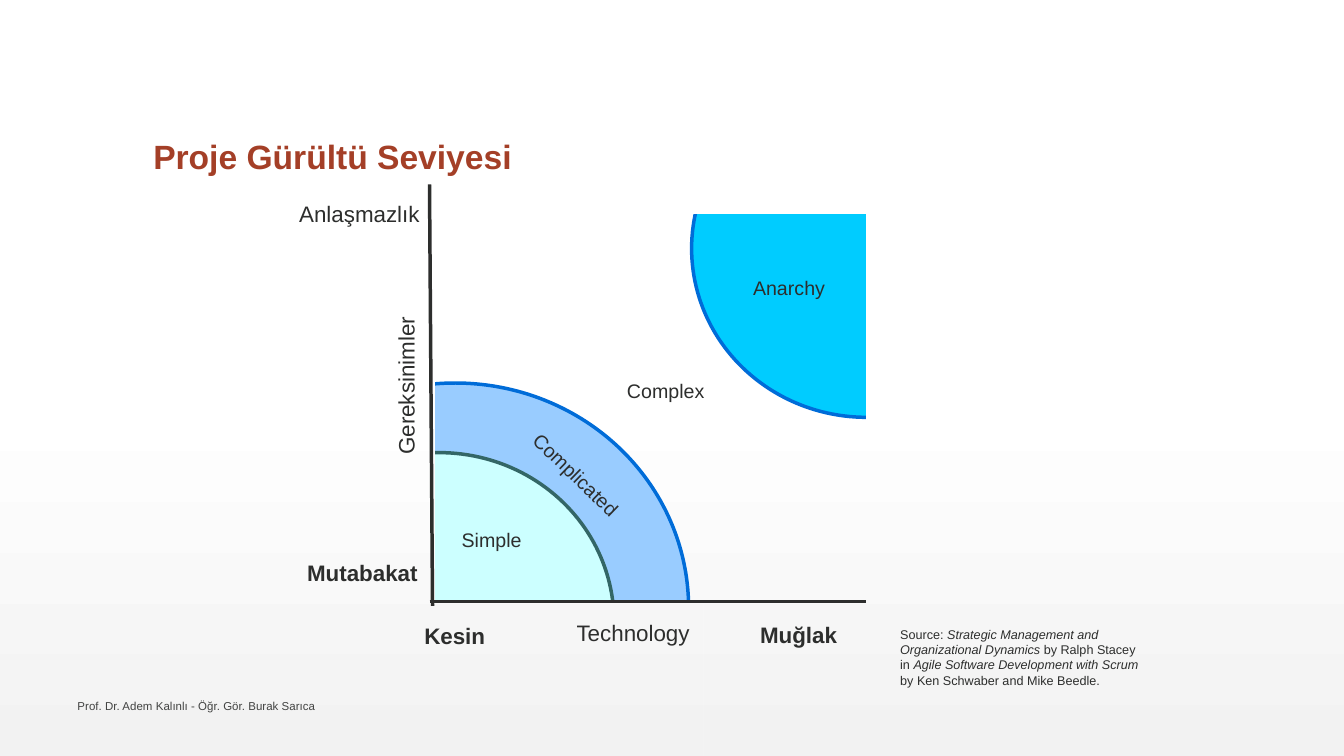
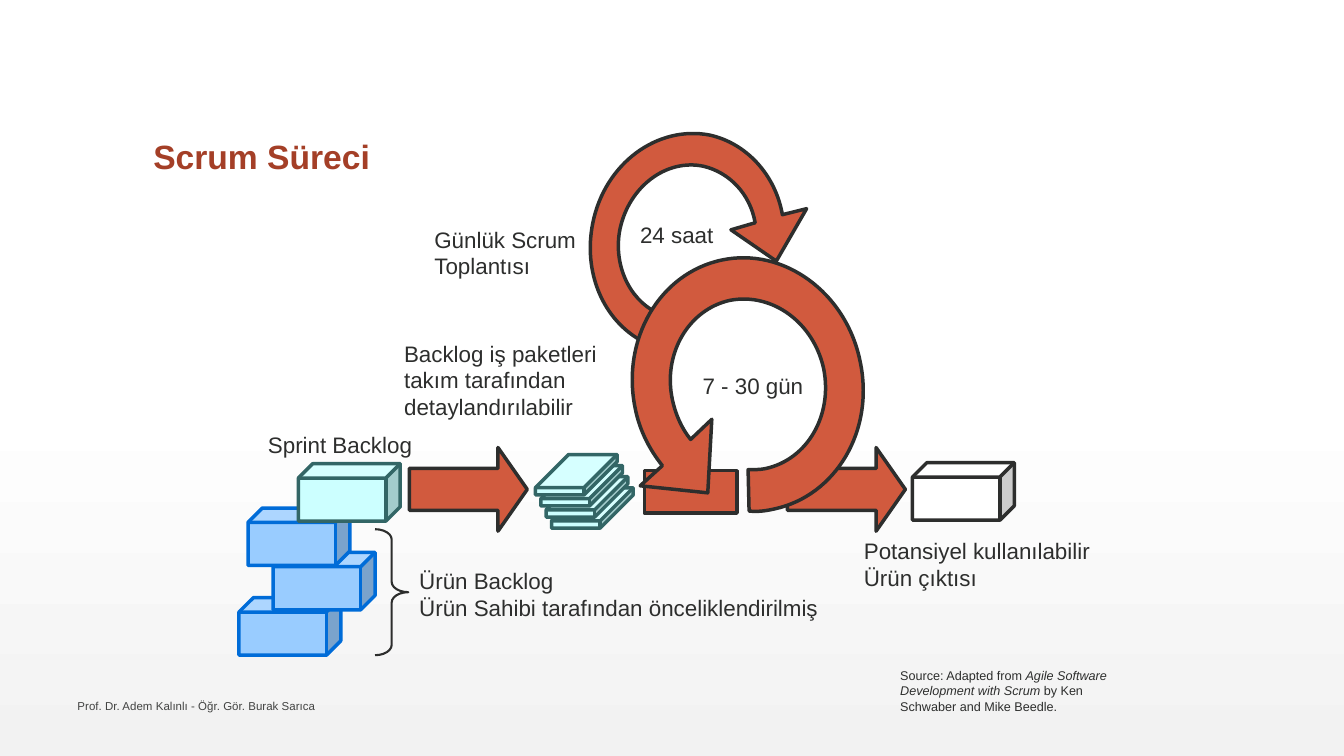
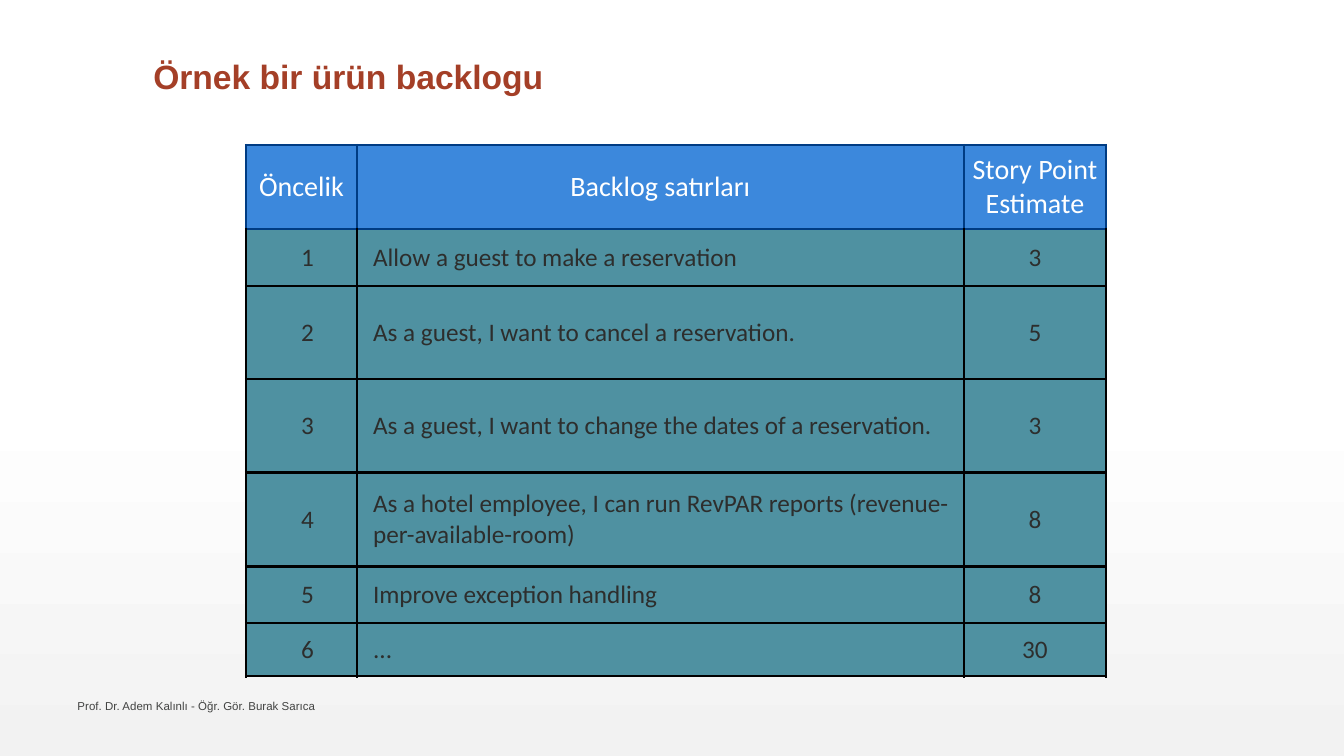
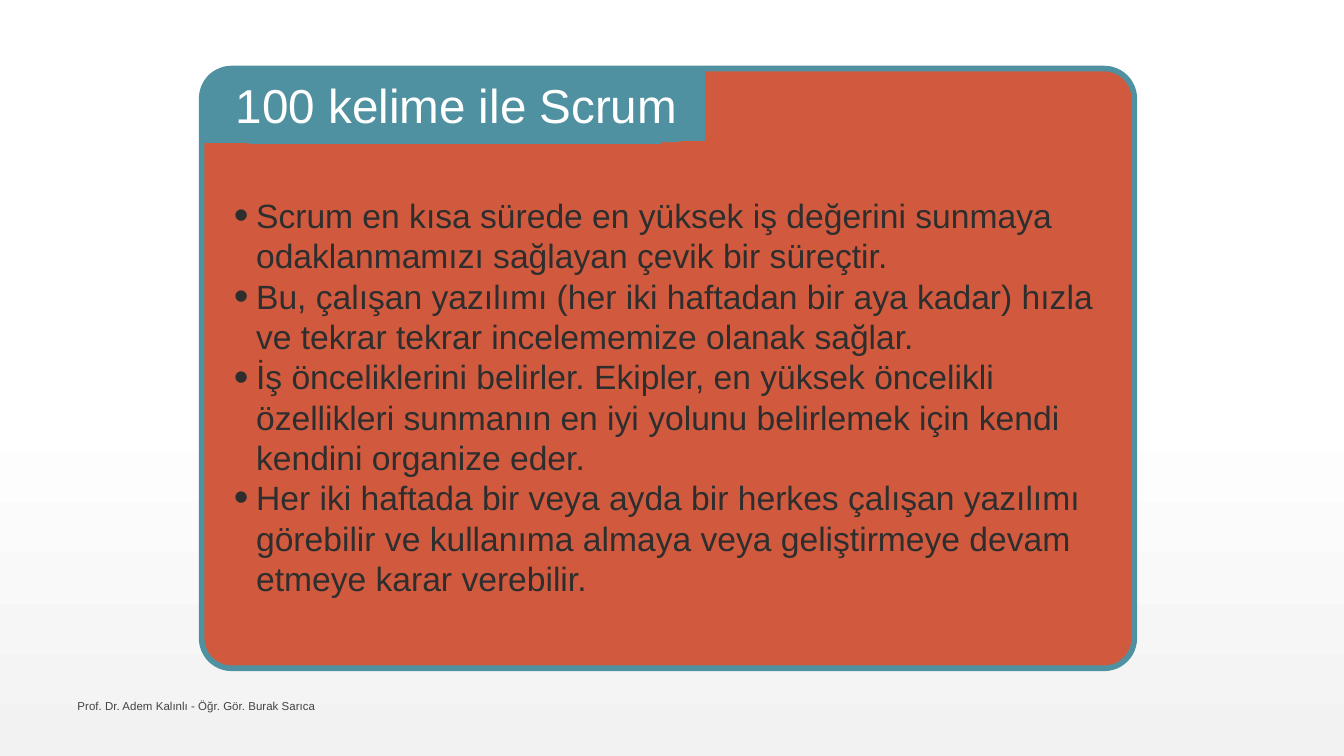
from lxml import etree
from pptx import Presentation
from pptx.dml.color import RGBColor
from pptx.enum.shapes import MSO_CONNECTOR, MSO_SHAPE as SHAPE
from pptx.enum.text import MSO_ANCHOR as ANCHOR, MSO_AUTO_SIZE as AUTO_SIZE, PP_ALIGN as ALIGN
from pptx.oxml.ns import qn
from pptx.util import Inches, Pt

COLORS = {
    "white": "FFFFFF", "page_end": "F2F2F2", "ink": "2D2E2D", "footer": "424342",
    "title": "A43F27", "orange": "D15A3E", "teal": "4F91A1",
    "blue": "99CCFF", "blue_line": "006CD8", "mint": "CCFFFF", "mint_line": "336666",
    "cyan": "00CCFF", "header": "3C88DC", "header_line": "003C83", "black": "000000",
}
FONT = "Arial"
FOOTER = "Prof. Dr. Adem Kalınlı - Öğr. Gör. Burak Sarıca"
TITLE_BOX = (1.42, 0.55, 10.5, 1.25)

AGREED_ZONES = [
    ((2.2, 3.8, 4.63, 4.46), "blue", "blue_line"),
    ((2.62, 4.49, 3.47, 3.35), "mint", "mint_line"),
]
AGREED_MASKS = [(2.06, 5.97, 4.92, 2.34), (2.06, 3.38, 2.26, 2.89)]
ANARCHY_ZONES = [((6.86, 0.79, 3.47, 3.35), "cyan", "blue_line")]
ANARCHY_MASKS = [(6.28, 0.66, 4.92, 1.46), (8.59, 2.01, 2.6, 2.47)]
AXES = [((4.29, 6.01), (4.26, 1.83)), ((4.26, 5.97), (8.59, 5.97))]
ZONE_LABELS = [
    ("Simple", (4.48, 5.19, 1.59, 0.34), 0),
    ("Complicated", (4.95, 4.84, 2.14, 0.34), 44.1),
    ("Anarchy", (7.37, 2.69, 1.59, 0.34), 0),
    ("Complex", (6.12, 3.71, 1.88, 0.34), 0),
]
AXIS_LABELS = [
    ("Kesin", (4.11, 6.12, 1.74, 0.37), True, ALIGN.LEFT, 0),
    ("Muğlak", (7.44, 6.11, 1.74, 0.37), True, ALIGN.LEFT, 0),
    ("Technology", (5.62, 6.09, 2.99, 0.37), False, ALIGN.LEFT, 0),
    ("Mutabakat", (2.52, 5.5, 1.72, 0.37), True, ALIGN.RIGHT, 0),
    ("Anlaşmazlık", (2.52, 1.94, 1.74, 0.37), False, ALIGN.RIGHT, 0),
    ("Gereksinimler", (2.52, 2.92, 3.01, 0.37), False, ALIGN.LEFT, 270),
]
NOISE_SOURCE = [
    ("Source: ", False),
    ("Strategic Management and Organizational Dynamics ", True),
    ("by Ralph Stacey in ", False),
    ("Agile Software Development with Scrum ", True),
    ("by Ken Schwaber and Mike Beedle.", False),
]

DAILY_LOOP = [
    (7.49, 2.21), (7.44, 1.92, 7.23, 1.71, 6.98, 1.65), (6.61, 1.57, 6.24, 1.85, 6.15, 2.27),
    (6.08, 2.61, 6.23, 2.96, 6.51, 3.1), (6.38, 3.39), (5.98, 3.18, 5.78, 2.7, 5.88, 2.21),
    (6, 1.62, 6.52, 1.24, 7.04, 1.34), (7.4, 1.42, 7.69, 1.73, 7.76, 2.13),
    (8, 2.07), (7.7, 2.59), (7.25, 2.28),
]
SPRINT_LOOP = [
    (6.85, 4.36), (6.76, 4.25, 6.7, 4.11, 6.67, 3.97), (6.57, 3.51, 6.83, 3.07, 7.24, 2.98),
    (7.66, 2.9, 8.07, 3.2, 8.17, 3.66), (8.26, 4.12, 8.01, 4.56, 7.59, 4.65),
    (7.54, 4.66, 7.48, 4.66, 7.42, 4.66), (7.43, 5.07), (7.51, 5.08, 7.59, 5.07, 7.68, 5.05),
    (8.29, 4.92, 8.68, 4.27, 8.53, 3.58), (8.39, 2.9, 7.77, 2.45, 7.16, 2.58),
    (6.54, 2.71, 6.16, 3.37, 6.3, 4.05), (6.34, 4.26, 6.44, 4.46, 6.57, 4.62),
    (6.35, 4.82), (7.02, 4.89), (7.06, 4.16),
]
PRODUCT_CUBES = [(2.37, 5.93), (2.71, 5.48), (2.46, 5.04)]
PROCESS_LABELS = [
    (["7 - 30 gün"], (6.87, 3.64, 1.21, 0.37)),
    (["24 saat"], (6.25, 2.14, 0.94, 0.37)),
    (["Ürün Backlog", "Ürün Sahibi tarafından önceliklendirilmiş"], (4.06, 5.58, 4.2, 0.64)),
    (["Sprint Backlog"], (2.56, 4.23, 1.63, 0.37)),
    (["Backlog iş paketleri\ntakım tarafından \ndetaylandırılabilir"], (3.91, 3.32, 2.13, 0.91)),
    (["Potansiyel kullanılabilir\nÜrün çıktısı"], (8.47, 5.28, 2.47, 0.64)),
    (["Günlük Scrum \nToplantısı"], (4.21, 2.19, 1.69, 0.64)),
]
PROCESS_SOURCE = [
    ("Source: Adapted from ", False),
    ("Agile Software Development with Scrum ", True),
    ("by Ken Schwaber and Mike Beedle.", False),
]

BACKLOG_ROWS = [
    ("Öncelik", "Backlog satırları", "Story Point Estimate"),
    ("1", "Allow a guest to make a reservation", "3"),
    ("2", "As a guest, I want to cancel a reservation.", "5"),
    ("3", "As a guest, I want to change the dates of a reservation.", "3"),
    ("4", "As a hotel employee, I can run RevPAR reports (revenue-per-available-room)", "8"),
    ("5", "Improve exception handling", "8"),
    ("6", "...", "30"),
]
TABLE_BOX = (2.44, 1.44, 8.52, 5.51)
COLUMN_WIDTHS = [1.1, 6.02, 1.41]
ROW_HEIGHTS = [0.83, 0.57, 0.92, 0.93, 0.93, 0.56, 0.53]

SCRUM_POINTS = [
    "Scrum en kısa sürede en yüksek iş değerini sunmaya odaklanmamızı sağlayan çevik bir süreçtir.",
    "Bu, çalışan yazılımı (her iki haftadan bir aya kadar) hızla ve tekrar tekrar incelememize "
    "olanak sağlar.",
    "İş önceliklerini belirler. Ekipler, en yüksek öncelikli özellikleri sunmanın en iyi yolunu "
    "belirlemek için kendi kendini organize eder.",
    "Her iki haftada bir veya ayda bir herkes çalışan yazılımı görebilir ve kullanıma almaya veya "
    "geliştirmeye devam etmeye karar verebilir.",
]
TAB_CORNERS = [
    [(6.68, 1.41), (6.89, 1.4, 6.99, 1.28, 6.99, 1.12), (6.99, 0.96), (6.5, 0.96), (6.5, 1.41)],
    [(2.3, 0.66), (2.09, 0.67, 1.99, 0.79, 1.99, 0.96), (1.99, 1.11), (2.48, 1.11), (2.48, 0.66)],
]
TAB_BLOCKS = [
    ((2.47, 0.69, 4.08, 0.72), "teal"),
    ((1.99, 1.1, 0.57, 0.31), "teal"),
    ((6.42, 0.68, 0.57, 0.33), None),
]


def color(name):
    return RGBColor.from_string(COLORS[name])


def inches(values):
    return [Inches(value) for value in values]


def paint(shape, fill=None, line=None, width=2.5):
    if fill:
        shape.fill.solid()
        shape.fill.fore_color.rgb = color(fill)
    else:
        shape.fill.background()
    if line:
        shape.line.color.rgb = color(line)
        shape.line.width = Pt(width)
    else:
        shape.line.fill.background()


def add_run(paragraph, text, size, ink="ink", bold=False, italic=False, font=FONT):
    for index, line in enumerate(text.split("\n")):
        if index:
            paragraph.add_line_break()
        run = paragraph.add_run()
        run.text = line
        run.font.name = font
        run.font.size = Pt(size)
        run.font.bold = bold
        run.font.italic = italic
        run.font.color.rgb = color(ink)


def add_text(slide, box, paragraphs, size, ink="ink", bold=False, align=ALIGN.LEFT,
             rotation=0, wrap=True, anchor=ANCHOR.TOP, auto_size=AUTO_SIZE.SHAPE_TO_FIT_TEXT):
    shape = slide.shapes.add_textbox(*inches(box))
    shape.rotation = rotation
    frame = shape.text_frame
    frame.word_wrap = wrap
    frame.auto_size = auto_size
    frame.vertical_anchor = anchor
    for index, runs in enumerate(paragraphs):
        paragraph = frame.add_paragraph() if index else frame.paragraphs[0]
        paragraph.alignment = align
        for text, italic in ([(runs, False)] if isinstance(runs, str) else runs):
            add_run(paragraph, text, size, ink, bold, italic)
    return frame


def add_shape(slide, kind, box, fill=None, line=None, width=2.5, adjustments=()):
    shape = slide.shapes.add_shape(kind, *inches(box))
    shape.shadow.inherit = False
    for index, value in enumerate(adjustments):
        shape.adjustments[index] = value
    paint(shape, fill, line, width)
    return shape


def add_mask(slide, box):
    mask = add_shape(slide, SHAPE.RECTANGLE, box)
    element = mask._element
    element.set("useBgFill", "1")
    element.spPr.remove(element.spPr.find(qn("a:noFill")))
    element.remove(element.find(qn("p:style")))


def add_outline(slide, steps, fill, line=None):
    points = [step[start:start + 2] for step in steps for start in range(0, len(step), 2)]
    corners = [inches(point) for point in points]
    builder = slide.shapes.build_freeform(*corners[0])
    builder.add_line_segments(corners[1:], close=True)
    shape = builder.convert_to_shape()
    shape.shadow.inherit = False
    paint(shape, fill, line)
    segments = iter(list(shape._element.iter(qn("a:lnTo"))))
    for step in steps[1:]:
        segment = next(segments)
        if len(step) == 6:
            segment.tag = qn("a:cubicBezTo")
            for extra in (next(segments), next(segments)):
                segment.append(extra[0])
                extra.getparent().remove(extra)


def set_title(slide, text, box=TITLE_BOX, size=24, ink="title", bold=True,
              anchor=ANCHOR.BOTTOM, spacing=0.9):
    title = slide.shapes.title
    title.left, title.top, title.width, title.height = inches(box)
    frame = title.text_frame
    frame.word_wrap = True
    frame.vertical_anchor = anchor
    paragraph = frame.paragraphs[0]
    paragraph.alignment = ALIGN.LEFT
    paragraph.line_spacing = spacing
    add_run(paragraph, text, size, ink, bold)
    return title


def set_margins(frame, margin):
    frame.margin_left = frame.margin_right = Inches(margin)
    frame.margin_top = frame.margin_bottom = Inches(margin)


def set_background(presentation):
    fill = presentation.slide_master.background.fill
    fill.gradient()
    fill.gradient_angle = 270
    for stop, position, name in zip(fill.gradient_stops, (0.53, 1), ("white", "page_end")):
        stop.position = position
        stop.color.rgb = color(name)


def build_noise_slide(slide):
    set_title(slide, "Proje Gürültü Seviyesi")
    for zones, masks in ((AGREED_ZONES, AGREED_MASKS), (ANARCHY_ZONES, ANARCHY_MASKS)):
        for box, fill, line in zones:
            add_shape(slide, SHAPE.OVAL, box, fill, line)
        for box in masks:
            add_mask(slide, box)
    for start, end in AXES:
        axis = slide.shapes.add_connector(MSO_CONNECTOR.STRAIGHT, *inches(start + end))
        axis.line.color.rgb = color("ink")
        axis.line.width = Pt(2.5)
        etree.SubElement(axis._element.spPr, qn("a:effectLst"))
    for text, box, rotation in ZONE_LABELS:
        add_text(slide, box, [text], 14, rotation=rotation)
    for text, box, bold, align, rotation in AXIS_LABELS:
        add_text(slide, box, [text], 16, bold=bold, align=align, rotation=rotation)
    add_text(slide, (8.83, 6.17, 2.58, 0.71), [NOISE_SOURCE], 9)


def add_cube(slide, position, fill, line):
    add_shape(slide, SHAPE.CUBE, position + (1.01, 0.57), fill, line, adjustments=(0.25,))


def add_arrow(slide, left):
    add_shape(slide, SHAPE.RIGHT_ARROW, (left, 4.44, 1.17, 0.83), "orange", "ink",
              adjustments=(0.5, 0.35))


def build_process_slide(slide):
    set_title(slide, "Scrum Süreci")
    add_arrow(slide, 7.81)
    add_shape(slide, SHAPE.RECTANGLE, (6.39, 4.67, 0.92, 0.42), "orange", "ink")
    add_outline(slide, DAILY_LOOP, "orange", "ink")
    for position in PRODUCT_CUBES:
        add_cube(slide, position, "blue", "blue_line")
    add_cube(slide, (2.96, 4.6), "mint", "mint_line")
    for level in range(4):
        box = (5.47 - 0.053 * level, 4.84 - 0.11 * level, 0.81, 0.4)
        add_shape(slide, SHAPE.CUBE, box, "mint", "mint_line", adjustments=(0.82,))
    add_outline(slide, SPRINT_LOOP, "orange", "ink")
    add_arrow(slide, 4.06)
    add_cube(slide, (9.05, 4.59), "white", "ink")
    add_shape(slide, SHAPE.RIGHT_BRACE, (3.72, 5.25, 0.33, 1.25), line="ink", width=1.5,
              adjustments=(0.31, 0.5))
    for paragraphs, box in PROCESS_LABELS:
        add_text(slide, box, paragraphs, 16, wrap=False)
    add_text(slide, (8.83, 6.58, 2.58, 0.56), [PROCESS_SOURCE], 9)


def set_borders(cell, names):
    properties = cell._tc.get_or_add_tcPr()
    for index, (side, name) in enumerate(zip(("lnL", "lnR", "lnT", "lnB"), names)):
        line = etree.Element(qn(f"a:{side}"), w=str(Pt(2)))
        fill = etree.SubElement(line, qn("a:solidFill"))
        etree.SubElement(fill, qn("a:srgbClr"), val=COLORS[name])
        properties.insert(index, line)


def build_backlog_slide(slide):
    set_title(slide, "Örnek bir ürün backlogu", anchor=ANCHOR.TOP)
    table = slide.shapes.add_table(
        len(ROW_HEIGHTS), len(COLUMN_WIDTHS), *inches(TABLE_BOX)).table
    for column, width in zip(table.columns, COLUMN_WIDTHS):
        column.width = Inches(width)
    for row_index, texts in enumerate(BACKLOG_ROWS):
        table.rows[row_index].height = Inches(ROW_HEIGHTS[row_index])
        header = row_index == 0
        for column_index, text in enumerate(texts):
            cell = table.cell(row_index, column_index)
            indented = not header and column_index < 2
            set_margins(cell, 0.04)
            if indented:
                cell.margin_left = Inches(0.16)
            cell.vertical_anchor = ANCHOR.MIDDLE
            cell.fill.solid()
            cell.fill.fore_color.rgb = color("header" if header else "teal")
            edge = "header_line" if header else "black"
            set_borders(cell, (edge, edge, "header_line" if row_index < 2 else "black", edge))
            paragraph = cell.text_frame.paragraphs[0]
            paragraph.alignment = ALIGN.LEFT if indented and column_index == 1 else ALIGN.CENTER
            add_run(paragraph, text, 20 if header else 18, "white" if header else "ink",
                    font="Calibri")


def build_summary_slide(slide):
    add_shape(slide, SHAPE.ROUNDED_RECTANGLE, (2, 0.68, 9.25, 5.95), "orange", "teal", 4, (0.05,))
    frame = add_text(slide, (2.32, 1.56, 8.78, 4.75), SCRUM_POINTS, 24, anchor=ANCHOR.MIDDLE,
                     auto_size=AUTO_SIZE.NONE)
    set_margins(frame, 0)
    for paragraph in frame.paragraphs:
        properties = paragraph._p.get_or_add_pPr()
        properties.set("marL", str(Inches(0.22)))
        properties.set("indent", str(-Inches(0.22)))
        etree.SubElement(properties, qn("a:buSzPct"), val="125000")
        etree.SubElement(properties, qn("a:buFont"), typeface=FONT)
        etree.SubElement(properties, qn("a:buChar"), char="•")
    for corner in TAB_CORNERS:
        add_outline(slide, corner, "teal")
    for box, line in TAB_BLOCKS:
        add_shape(slide, SHAPE.RECTANGLE, box, "teal", line, 2)
    title = set_title(slide, "100 kelime ile Scrum", (2.29, 0.7, 4.7, 0.69), 34, "white", False,
                      ANCHOR.TOP, 1)
    paint(title, "teal", "teal", 0.75)
    set_margins(title.text_frame, 0.05)
    slide.shapes._spTree.append(title._element)


def main():
    presentation = Presentation()
    presentation.slide_width, presentation.slide_height = inches((13.33, 7.5))
    set_background(presentation)
    for build in (build_noise_slide, build_process_slide, build_backlog_slide,
                  build_summary_slide):
        slide = presentation.slides.add_slide(presentation.slide_layouts[5])
        build(slide)
        add_text(slide, (0.67, 6.88, 6.7, 0.24), [FOOTER], 8.25, "footer",
                 anchor=ANCHOR.MIDDLE, auto_size=AUTO_SIZE.NONE)
    presentation.save("out.pptx")


if __name__ == "__main__":
    main()
